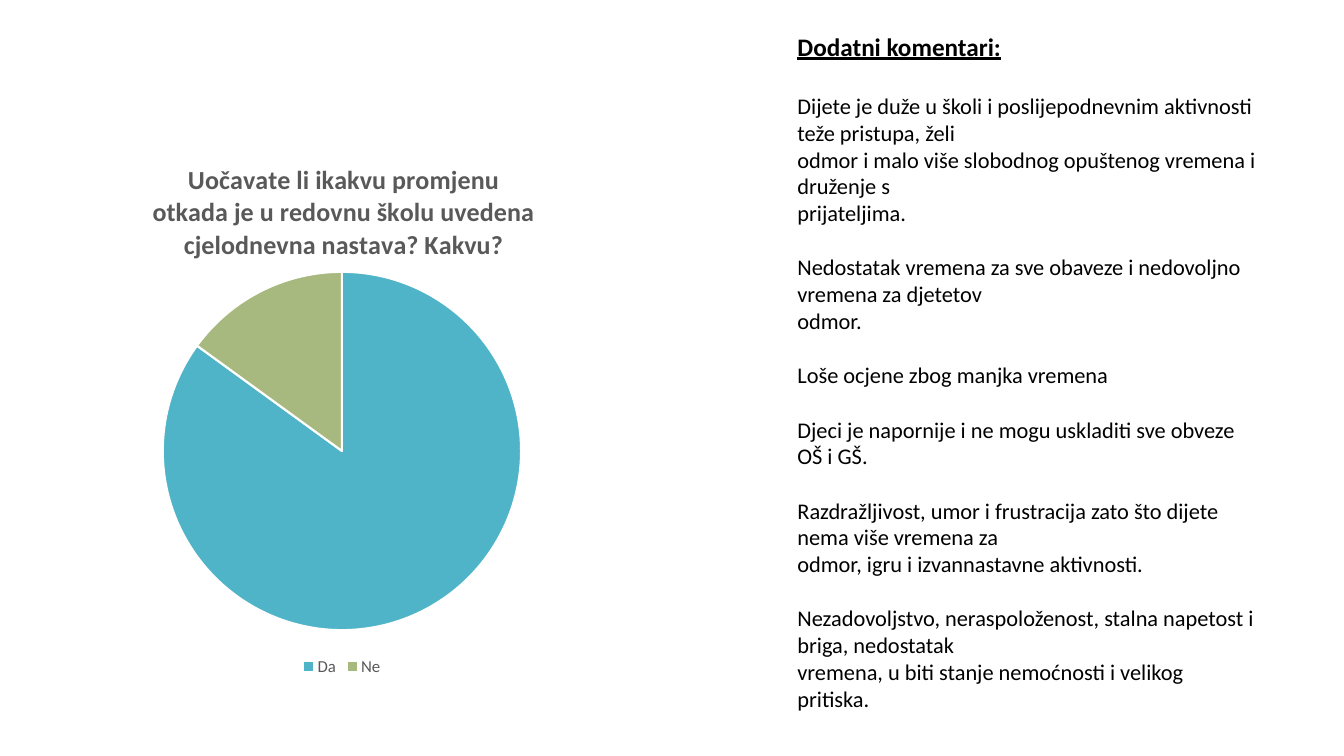
from dataclasses import dataclass

from pptx import Presentation
from pptx import util as u
from pptx.chart import data as cd
from pptx.dml.color import RGBColor
from pptx.enum import chart as ch
from pptx.enum import text
from pptx.oxml import parse_xml
from pptx.oxml.ns import nsdecls

Pt = u.Pt


@dataclass
class Theme:
    font: str = "Calibri"
    ink: str = "000000"
    muted: str = "595959"
    paper: str = "FFFFFF"
    slices: tuple = ("50B4C8", "A8B97F")
    title: float = 18.6
    heading: float = 18
    body: float = 16
    legend: float = 12
    line: float = 1.22  # line height per point of type


def manual_layout(x, y, w=None, h=None, inner=False):
    """Chart layout element, in fractions of the chart frame."""
    target = '<c:layoutTarget val="inner"/>' if inner else ""
    modes = '<c:xMode val="edge"/><c:yMode val="edge"/>'
    sizes = "".join(f'<c:{k} val="{v}"/>' for k, v in zip("xywh", (x, y, w, h))
                    if v is not None)
    return parse_xml(f'<c:layout {nsdecls("c")}><c:manualLayout>{target}{modes}'
                     f'{sizes}</c:manualLayout></c:layout>')


class Deck:
    def __init__(self, theme):
        self.theme = theme
        self.prs = Presentation()
        self.prs.slide_width, self.prs.slide_height = Pt(960), Pt(540)
        self.s = self.prs.slides.add_slide(self.prs.slide_layouts[6])

    def style(self, font, size, color, bold=False, underline=None):
        font.name, font.size, font.bold = self.theme.font, Pt(size), bold
        font.color.rgb = RGBColor.from_string(color)
        if underline is not None:
            font.underline = underline

    def run(self, p, words, size, **look):
        r = p.add_run()
        r.text = words
        self.style(r.font, size, self.theme.ink, **look)

    def pie(self, box, title, values):
        t = self.theme
        data = cd.CategoryChartData()
        data.categories = list(values)
        data.add_series("Series 1", list(values.values()))
        chart = self.s.shapes.add_chart(
            ch.XL_CHART_TYPE.PIE, *map(Pt, box), data).chart
        self.style(chart.font, 10, t.ink)

        # Title
        tf = chart.chart_title.text_frame
        r = tf.paragraphs[0].add_run()
        r.text = title
        self.style(r.font, t.title, t.muted, bold=True)

        # Slices
        plot = chart.plots[0]
        plot.vary_by_categories = True
        for i, color in enumerate(t.slices):
            fmt = plot.series[0].points[i].format
            fmt.fill.solid()
            fmt.fill.fore_color.rgb = RGBColor.from_string(color)
            fmt.line.color.rgb = RGBColor.from_string(t.paper)
            fmt.line.width = Pt(1.5)

        # Legend
        chart.has_legend = True
        chart.legend.position = ch.XL_LEGEND_POSITION.BOTTOM
        chart.legend.include_in_layout = False
        self.style(chart.legend.font, t.legend, t.muted)

        # Places of title and pie
        for old in chart.element.xpath("c:chart/c:title/c:layout|.//c:plotArea/c:layout"):
            old.getparent().remove(old)
        chart.element.xpath("c:chart/c:title/c:tx")[0].addnext(
            manual_layout(0.11, 0.04))
        chart.element.xpath(".//c:plotArea")[0].insert(
            0, manual_layout(0.14, 0.25, 0.72, 0.66, inner=True))

    def comments(self, box, heading, groups):
        t = self.theme
        sp = self.s.shapes.add_textbox(*map(Pt, box))
        tf = sp.text_frame
        tf.word_wrap = True
        tf.auto_size = text.MSO_AUTO_SIZE.SHAPE_TO_FIT_TEXT
        p = tf.paragraphs[0]
        self.run(p, heading, t.heading, bold=True, underline=True)
        gap = t.heading * t.line
        for group in groups:
            for i, words in enumerate(group):
                p = tf.add_paragraph()
                p.space_before = Pt(0 if i else round(gap, 1))
                self.run(p, words, t.body)
            gap = t.body * t.line


def main():
    deck = Deck(Theme())

    # Survey answers
    deck.pie((66.5, 96, 355.5, 390),
             "Uočavate li ikakvu promjenu otkada je u redovnu školu uvedena "
             "cjelodnevna nastava? Kakvu?",
             {"Da": 85, "Ne": 15})

    # Parents' comments, one group of lines each
    deck.comments((562.5, 18.5, 342, 497), "Dodatni komentari:", [
        ("Dijete je duže u školi i poslijepodnevnim aktivnosti teže pristupa, želi",
         "odmor i malo više slobodnog opuštenog vremena i druženje s",
         "prijateljima."),
        ("Nedostatak vremena za sve obaveze i nedovoljno vremena za djetetov",
         "odmor."),
        ("Loše ocjene zbog manjka vremena",),
        ("Djeci je napornije i ne mogu uskladiti sve obveze OŠ i GŠ.",),
        ("Razdražljivost, umor i frustracija zato što dijete nema više vremena za",
         "odmor, igru i izvannastavne aktivnosti."),
        ("Nezadovoljstvo, neraspoloženost, stalna napetost i briga, nedostatak",
         "vremena, u biti stanje nemoćnosti i velikog pritiska."),
    ])
    deck.prs.save("out.pptx")


if __name__ == "__main__":
    main()
